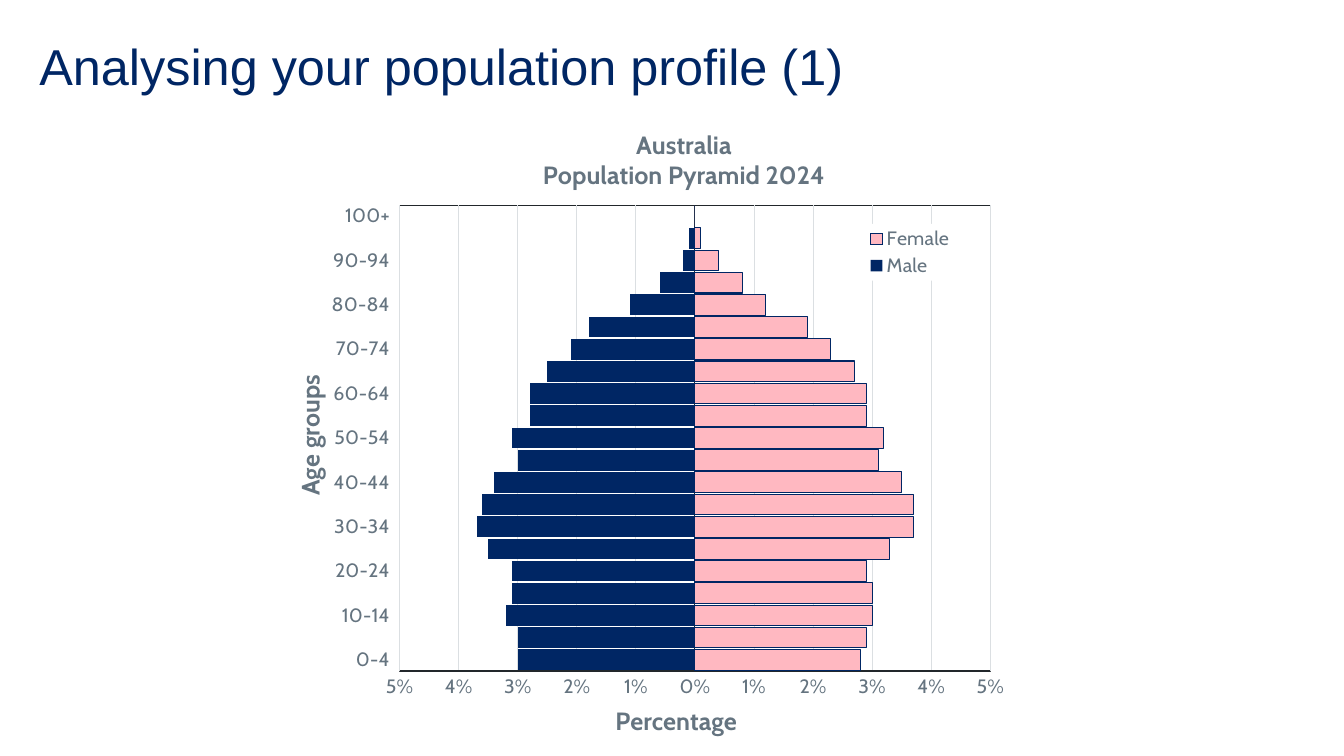
from lxml import etree
from pptx import Presentation
from pptx import util as u
from pptx.chart import data
from pptx.dml import color
from pptx.enum import chart as ch, text
from pptx.oxml import ns

THEME = {
    "navy": color.RGBColor.from_string("002664"),
    "pink": color.RGBColor.from_string("FFB8C1"),
    "grey": color.RGBColor.from_string("657480"),
    "ink": color.RGBColor.from_string("22272B"),
    "grid": color.RGBColor.from_string("DBDFE2"),
    "white": color.RGBColor.from_string("FFFFFF"),
    "line": u.Pt(0.75),
    "heading": {"name": "Arial", "size": u.Pt(36), "bold": False},
    "base": {"name": "Arial", "size": u.Pt(10)},
    "title": {"name": "Cabin", "size": u.Pt(18), "bold": True},
    "label": {"name": "Cabin", "size": u.Pt(14), "bold": False},
}


def style(font, kind, colour):
    for name, value in THEME[kind].items():
        setattr(font, name, value)
    font.color.rgb = THEME[colour]


def place(el, index, **values):
    for old in el.xpath("c:layout"):
        el.remove(old)
    layout = etree.Element(ns.qn("c:layout"))
    manual = etree.SubElement(layout, ns.qn("c:manualLayout"))
    settings = {"xMode": "edge", "yMode": "edge", **values}
    for key in ("layoutTarget", "xMode", "yMode", "x", "y", "w", "h"):
        if key in settings:
            etree.SubElement(manual, ns.qn(f"c:{key}")).set("val", str(settings[key]))
    el.insert(index, layout)


prs = Presentation()
prs.slide_width, prs.slide_height = u.Inches(13.33), u.Inches(7.5)
s = prs.slides.add_slide(prs.slide_layouts[6])

sp = s.shapes.add_textbox(u.Inches(0.39), u.Inches(0.39), u.Inches(12.56), u.Inches(0.6))
tf = sp.text_frame
frame = {"word_wrap": True, "vertical_anchor": text.MSO_ANCHOR.MIDDLE,
         "margin_left": 0, "margin_right": 0, "margin_top": 0, "margin_bottom": 0}
for name, value in frame.items():
    setattr(tf, name, value)
p = tf.paragraphs[0]
p.line_spacing = 0.9
r = p.add_run()
r.text = "Analysing your population profile (1)"
style(r.font, "heading", "navy")

male = [-0.03, -0.03, -0.032, -0.031, -0.031, -0.035, -0.037, -0.036, -0.034, -0.03, -0.031,
        -0.028, -0.028, -0.025, -0.021, -0.018, -0.011, -0.006, -0.002, -0.001, 0]
female = [0.028, 0.029, 0.03, 0.03, 0.029, 0.033, 0.037, 0.037, 0.035, 0.031, 0.032,
          0.029, 0.029, 0.027, 0.023, 0.019, 0.012, 0.008, 0.004, 0.001, 0]
cd = data.CategoryChartData(number_format="0.0%")
cd.categories = [f"{age}-{age + 4}" for age in range(0, 100, 5)] + ["100+"]
cd.add_series("Male", male)
cd.add_series("Female", female)
chart = s.shapes.add_chart(ch.XL_CHART_TYPE.BAR_CLUSTERED, u.Inches(2.7), u.Inches(1.06),
                           u.Inches(7.81), u.Inches(6.32), cd).chart
style(chart.font, "base", "ink")

plot = chart.plots[0]
for name, value in {"gap_width": 7, "overlap": 100, "vary_by_categories": False}.items():
    setattr(plot, name, value)
for series, fill in zip(plot.series, ("navy", "pink")):
    series.invert_if_negative = False
    series.format.fill.solid()
    series.format.fill.fore_color.rgb = THEME[fill]
    if fill == "pink":
        series.format.line.color.rgb = THEME["navy"]
        series.format.line.width = THEME["line"]
    else:
        series.format.line.fill.background()

ages, share = chart.category_axis, chart.value_axis
scale = {"minimum_scale": -0.05, "maximum_scale": 0.05, "major_unit": 0.01,
         "has_major_gridlines": True}
for name, value in scale.items():
    setattr(share, name, value)
share.tick_labels.number_format = "#,##0%;#,##0%"
share.tick_labels.number_format_is_linked = False
share.major_gridlines.format.line.color.rgb = THEME["grid"]
share.major_gridlines.format.line.width = THEME["line"]
ages.tick_label_position = ch.XL_TICK_LABEL_POSITION.LOW
share.tick_label_position = ch.XL_TICK_LABEL_POSITION.NEXT_TO_AXIS
for axis in (ages, share):
    axis.major_tick_mark = axis.minor_tick_mark = ch.XL_TICK_MARK.NONE
    axis.format.line.color.rgb = THEME["ink"]
    axis.format.line.width = THEME["line"]
    style(axis.tick_labels.font, "label", "grey")

chart.has_title = True
titles = [
    (chart.chart_title, ["Australia", "Population Pyramid 2024"], 0.34, 0.03, 0),
    (ages.axis_title, ["Age groups"], 0.02, 0.42, -90),
    (share.axis_title, ["Percentage"], 0.43, 0.94, 0),
]
for title, lines, x, y, angle in titles:
    tf = title.text_frame
    for i, line in enumerate(lines):
        p = tf.add_paragraph() if i else tf.paragraphs[0]
        r = p.add_run()
        r.text = line
        style(r.font, "title", "grey")
    el = title._element
    body = el.xpath("c:tx/c:rich/a:bodyPr")[0]
    body.set("rot", str(angle * 60000))
    body.set("vert", "horz")
    place(el, 1, x=x, y=y)

chart.has_legend = True
legend = chart.legend
legend.position = ch.XL_LEGEND_POSITION.RIGHT
legend.include_in_layout = False
style(legend.font, "label", "grey")
place(legend._element, 1, x=0.745, y=0.186, w=0.13, h=0.09)

area = chart._chartSpace.xpath("c:chart/c:plotArea")[0]
place(area, 0, layoutTarget="inner", x=0.162, y=0.156, w=0.75, h=0.74)

cat = area.xpath("c:catAx")[0]
skip = etree.Element(ns.qn("c:tickLblSkip"), val="2")
cat.xpath("c:noMultiLvlLbl")[0].addprevious(skip)

border = etree.SubElement(area, ns.qn("c:spPr"))
etree.SubElement(border, ns.qn("a:noFill"))
ln = etree.SubElement(border, ns.qn("a:ln"), w=str(THEME["line"]))
backing = etree.Element(ns.qn("c:spPr"))
for parent, colour in ((ln, "ink"), (backing, "white")):
    solid = etree.SubElement(parent, ns.qn("a:solidFill"))
    etree.SubElement(solid, ns.qn("a:srgbClr"), val=str(THEME[colour]))
legend._element.xpath("c:txPr")[0].addprevious(backing)

prs.save("out.pptx")
